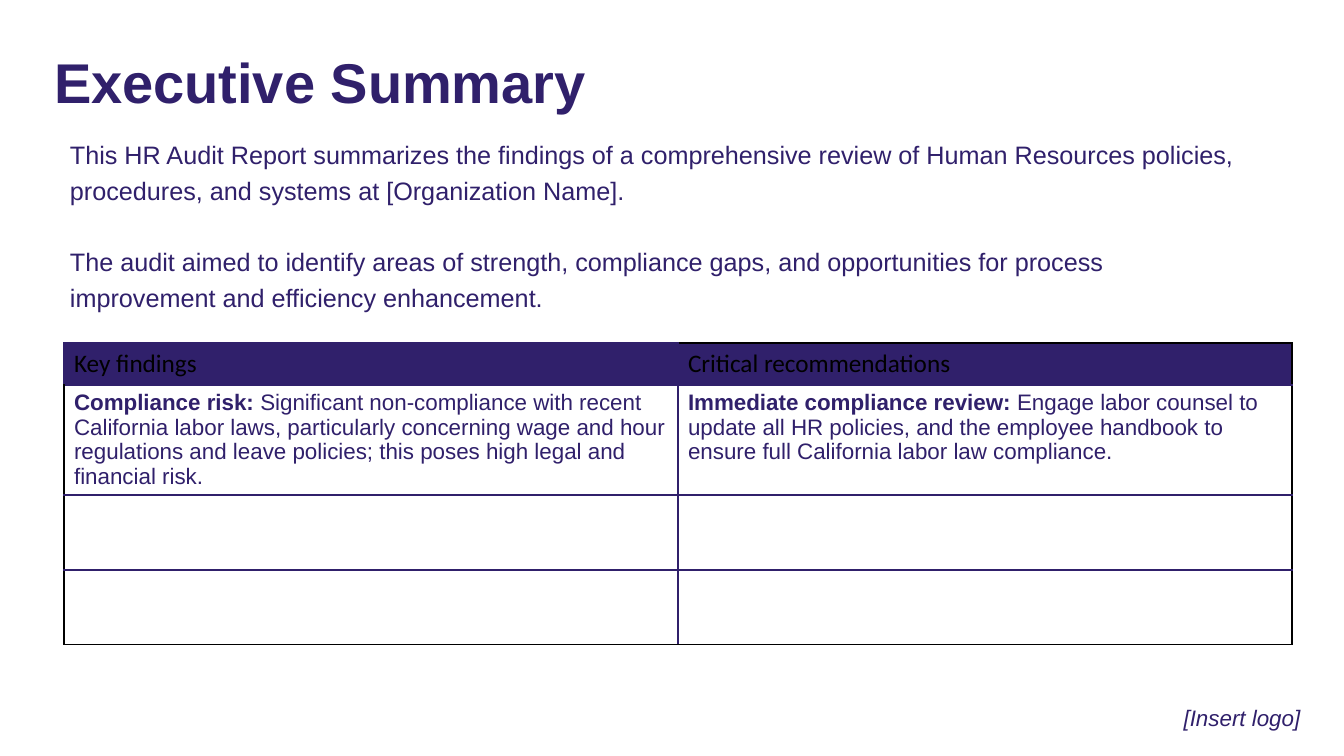
from lxml import etree
from pptx import Presentation
from pptx import util as u
from pptx.dml.color import RGBColor
from pptx.enum import text
from pptx.oxml.ns import qn

INDIGO = RGBColor(0x30, 0x20, 0x6B)
BLACK = RGBColor(0, 0, 0)
WHITE = RGBColor(255, 255, 255)
FONT = "Arial"

HEADING = "Executive Summary"
INTRO = [
    "This HR Audit Report summarizes the findings of a comprehensive review of Human Resources "
    "policies, procedures, and systems at [Organization Name].",
    "The audit aimed to identify areas of strength, compliance gaps, and opportunities for process "
    "improvement and efficiency enhancement.",
]
LOGO_NOTE = "[Insert logo]"
HEADERS = ["Key findings", "Critical recommendations"]
FINDINGS = [
    ("Compliance risk: ",
     "Significant non-compliance with recent California labor laws, particularly concerning wage "
     "and hour regulations and leave policies; this poses high legal and financial risk."),
    ("Immediate compliance review: ",
     "Engage labor counsel to update all HR policies, and the employee handbook to ensure full "
     "California labor law compliance."),
]
ROW_HEIGHTS = [42, 110, 75, 75]
COLUMN_WIDTH = 614


def px(n):
    """Turn px into EMU."""
    return u.Emu(round(n * 914400 / 100.8))


def style(paragraph, size, color=INDIGO, bold=None, italic=None):
    """Set the font of a paragraph."""
    font = paragraph.font
    font.name, font.size, font.bold, font.italic = FONT, u.Pt(size), bold, italic
    font.color.rgb = color


def set_frame(shape, box, anchor):
    """Place a text shape and return its frame without insets."""
    shape.left, shape.top, shape.width, shape.height = map(px, box)
    frame = shape.text_frame
    frame.word_wrap = True
    frame.auto_size = text.MSO_AUTO_SIZE.NONE
    frame.vertical_anchor = anchor
    frame.margin_left = frame.margin_top = frame.margin_right = frame.margin_bottom = 0
    return frame


def set_borders(cell, colors):
    """Draw the left, right, top and bottom edges of a cell."""
    props = cell._tc.get_or_add_tcPr()
    for side, color in zip("LRTB", colors):
        line = etree.SubElement(props, qn(f"a:ln{side}"), w=str(u.Pt(1)))
        fill = etree.SubElement(line, qn("a:solidFill"))
        etree.SubElement(fill, qn("a:srgbClr"), val=str(color))


def add_heading(slide):
    """Format the title placeholder."""
    frame = set_frame(slide.shapes.title, (54, 52, 1237, 66), text.MSO_ANCHOR.MIDDLE)
    frame.text = HEADING
    heading = frame.paragraphs[0]
    heading.alignment = text.PP_ALIGN.LEFT
    heading.line_spacing = 0.9
    style(heading, 40, bold=True)


def add_intro(slide):
    """Add the two introductory paragraphs."""
    frame = set_frame(slide.shapes.add_textbox(0, 0, 0, 0), (59, 134, 1193, 181),
                      text.MSO_ANCHOR.TOP)
    frame.margin_left = px(11)
    frame.text = "\n".join(INTRO)
    for paragraph in frame.paragraphs:
        paragraph.line_spacing = 1.19
        style(paragraph, 18)
    frame.paragraphs[1].space_before = u.Pt(24.6)


def add_logo_note(slide):
    """Add the note at the lower right."""
    frame = set_frame(slide.shapes.add_textbox(0, 0, 0, 0), (1164, 697, 156, 44),
                      text.MSO_ANCHOR.MIDDLE)
    frame.text = LOGO_NOTE
    note = frame.paragraphs[0]
    note.alignment = text.PP_ALIGN.CENTER
    note.line_spacing = 0.9
    style(note, 16, italic=True)


def add_findings(slide):
    """Add the table of findings and recommendations."""
    last_row, last_col = len(ROW_HEIGHTS) - 1, len(HEADERS) - 1
    table = slide.shapes.add_table(
        last_row + 1, last_col + 1, px(64), px(343),
        px(COLUMN_WIDTH * len(HEADERS)), px(sum(ROW_HEIGHTS))).table
    table.first_row = table.horz_banding = False
    for column in table.columns:
        column.width = px(COLUMN_WIDTH)
    for r, height in enumerate(ROW_HEIGHTS):
        table.rows[r].height = px(height)
        for c, header in enumerate(HEADERS):
            cell = table.cell(r, c)
            black_edges = (c == 0 and r > 0, c == last_col,
                           r == 0 and c == last_col, r == last_row)
            set_borders(cell, [BLACK if edge else INDIGO for edge in black_edges])
            paragraph = cell.text_frame.paragraphs[0]
            if r == 0:
                cell.fill.solid()
                cell.fill.fore_color.rgb = INDIGO
                cell.text = header
                paragraph.alignment = text.PP_ALIGN.CENTER
                style(paragraph, 18, WHITE, bold=True)
                continue
            cell.fill.background()
            style(paragraph, 16)
            if r == 1:
                for words, bold in zip(FINDINGS[c], (True, False)):
                    run = paragraph.add_run()
                    run.text = words
                    run.font.bold = bold


def main():
    """Build the executive summary slide."""
    deck = Presentation()
    deck.slide_width, deck.slide_height = px(1344), px(756)
    slide = deck.slides.add_slide(deck.slide_layouts[5])
    add_heading(slide)
    add_intro(slide)
    add_logo_note(slide)
    add_findings(slide)
    deck.save("out.pptx")


if __name__ == "__main__":
    main()
